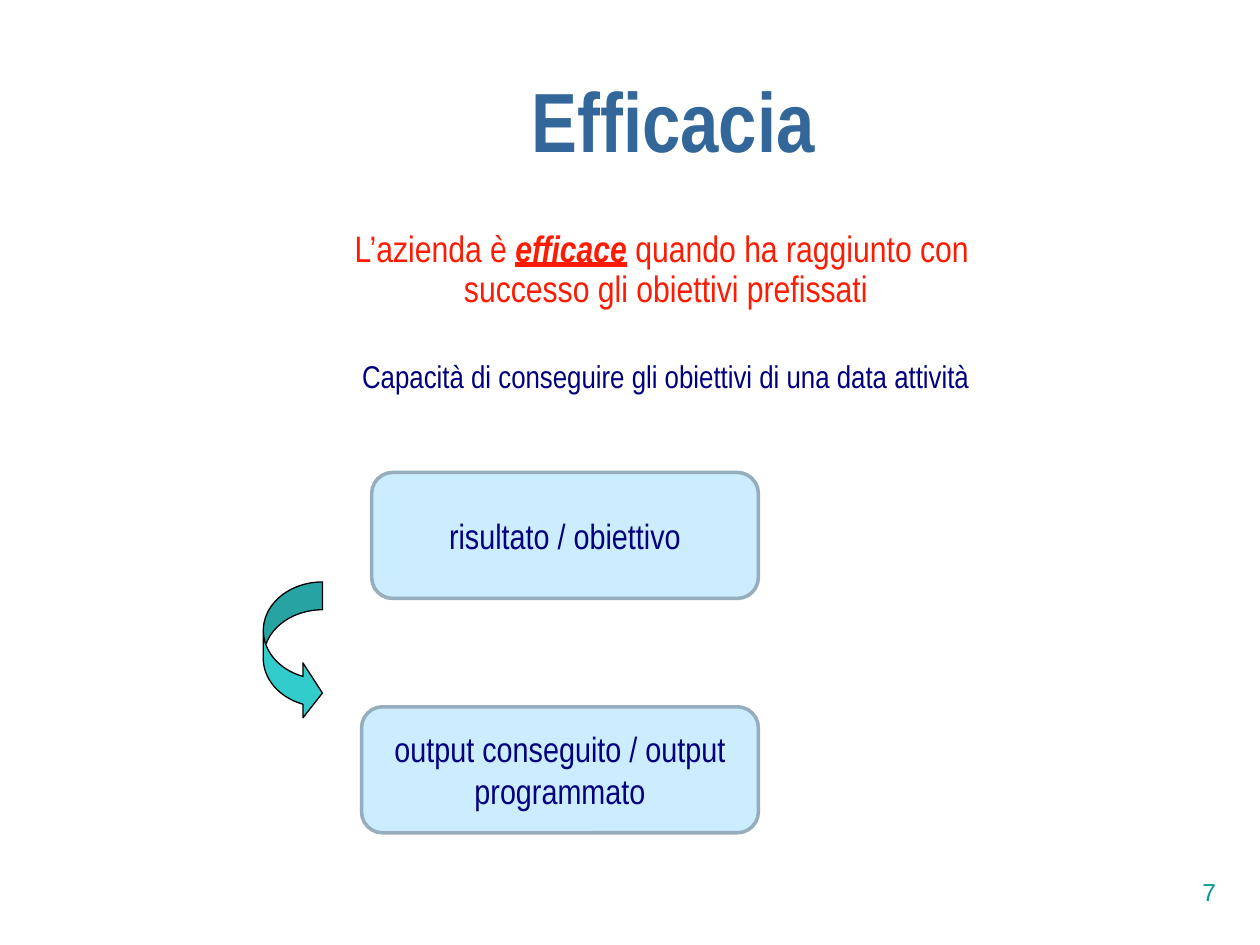
"""Build the slide that defines the effectiveness of a company."""
from dataclasses import dataclass

from lxml import etree
from pptx import Presentation
from pptx.dml.color import RGBColor
from pptx.enum.shapes import MSO_SHAPE
from pptx.enum.text import MSO_ANCHOR, MSO_AUTO_SIZE, PP_ALIGN
from pptx.oxml.ns import qn
from pptx.util import Pt

CENTER, RIGHT = PP_ALIGN.CENTER, PP_ALIGN.RIGHT
TOP, MIDDLE = MSO_ANCHOR.TOP, MSO_ANCHOR.MIDDLE
NO_FIT = MSO_AUTO_SIZE.NONE
ROUNDED = MSO_SHAPE.ROUNDED_RECTANGLE
CURVED_ARROW = MSO_SHAPE.CURVED_RIGHT_ARROW
NARROW = "Arial Narrow"
RED, NAVY, TEAL, TITLE_BLUE = "FD1B03", "00007F", "009999", "336699"
BOX_FILL, BOX_LINE, ARROW_FILL, BLACK = "CCECFF", "95ADBC", "33CCCC", "000000"


@dataclass
class Style:
    size: float
    color: str
    font: str = NARROW
    bold: bool = False
    align: PP_ALIGN = CENTER
    spacing: float = 1.0
    before: float = 0


@dataclass
class RatioBox:
    text: str
    left: float
    top: float
    width: float
    height: float = 72


BOXES = [
    RatioBox("risultato / obiettivo", 212.4, 270, 221),
    RatioBox("output conseguito / output programmato", 206.6, 403.9, 226.8),
]
BOX_STYLE = Style(20, NAVY)
DEFINITION_STYLE = Style(21, RED, spacing=0.9)
MEANING_STYLE = Style(18, NAVY, spacing=0.9, before=29)


def rgb(color: str) -> RGBColor:
    return RGBColor.from_string(color)


def place(sp, left: float, top: float, width: float, height: float) -> None:
    sp.left, sp.top, sp.width, sp.height = map(Pt, (left, top, width, height))


def set_frame(tf, anchor: MSO_ANCHOR) -> None:
    tf.word_wrap = True
    tf.auto_size = NO_FIT
    tf.vertical_anchor = anchor


def format_paragraph(p, style: Style) -> None:
    p.alignment = style.align
    p.line_spacing = style.spacing
    p.space_before = Pt(style.before)
    for r in p.runs:
        r.font.size = Pt(style.size)
        r.font.name = style.font
        r.font.bold = style.bold
        r.font.color.rgb = rgb(style.color)


def remove_bullet(p) -> None:
    p_pr = p._p.get_or_add_pPr()
    p_pr.set("marL", "0")
    p_pr.set("indent", "0")
    etree.SubElement(p_pr, qn("a:buNone"))


def add_filled_shape(slide, kind: MSO_SHAPE, bounds: tuple, fill: str, line: str, weight: float):
    sp = slide.shapes.add_shape(kind, *map(Pt, bounds))
    sp.shadow.inherit = False
    sp.fill.solid()
    sp.fill.fore_color.rgb = rgb(fill)
    sp.line.color.rgb = rgb(line)
    sp.line.width = Pt(weight)
    return sp


def add_ratio_box(slide, box: RatioBox) -> None:
    bounds = (box.left, box.top, box.width, box.height)
    sp = add_filled_shape(slide, ROUNDED, bounds, BOX_FILL, BOX_LINE, 2)
    set_frame(sp.text_frame, MIDDLE)
    sp.text_frame.text = box.text
    format_paragraph(sp.text_frame.paragraphs[0], BOX_STYLE)


def add_arrow(slide) -> None:
    sp = add_filled_shape(slide, CURVED_ARROW, (150.5, 332.6, 33.8, 79.2), ARROW_FILL, BLACK, 0.75)
    for i, value in enumerate((0.47, 0.93, 0.33)):
        sp.adjustments[i] = value


def fill_title(sp) -> None:
    place(sp, 66.2, 12.2, 637.2, 126)
    set_frame(sp.text_frame, MIDDLE)
    sp.text_frame.text = "Efficacia"
    format_paragraph(sp.text_frame.paragraphs[0], Style(48, TITLE_BLUE, bold=True, spacing=0.7))


def fill_body(sp) -> None:
    place(sp, 64.8, 128.2, 631.4, 122.4)
    tf = sp.text_frame
    set_frame(tf, TOP)
    first = tf.paragraphs[0]
    for text in ("L’azienda è ", "efficace", " quando ha raggiunto con "):
        first.add_run().text = text
    second, meaning = tf.add_paragraph(), tf.add_paragraph()
    second.text = "successo gli obiettivi prefissati"
    meaning.text = "Capacità di conseguire gli obiettivi di una data attività"
    styles = (DEFINITION_STYLE, DEFINITION_STYLE, MEANING_STYLE)
    for p, style in zip(tf.paragraphs, styles):
        format_paragraph(p, style)
        remove_bullet(p)
    keyword = first.runs[1].font
    keyword.bold = keyword.italic = keyword.underline = True


def add_page_number(slide) -> None:
    sp = slide.shapes.add_textbox(Pt(552.2), Pt(491.8), Pt(149.8), Pt(36))
    set_frame(sp.text_frame, MIDDLE)
    sp.text_frame.text = "7"
    format_paragraph(sp.text_frame.paragraphs[0], Style(14, TEAL, font="Arial", align=RIGHT))


def main() -> None:
    prs = Presentation()
    prs.slide_width, prs.slide_height = Pt(720), Pt(540)
    slide = prs.slides.add_slide(prs.slide_layouts[1])
    fill_title(slide.shapes.title)
    fill_body(slide.placeholders[1])
    add_page_number(slide)
    for box in BOXES:
        add_ratio_box(slide, box)
    add_arrow(slide)
    prs.save("out.pptx")


if __name__ == "__main__":
    main()
